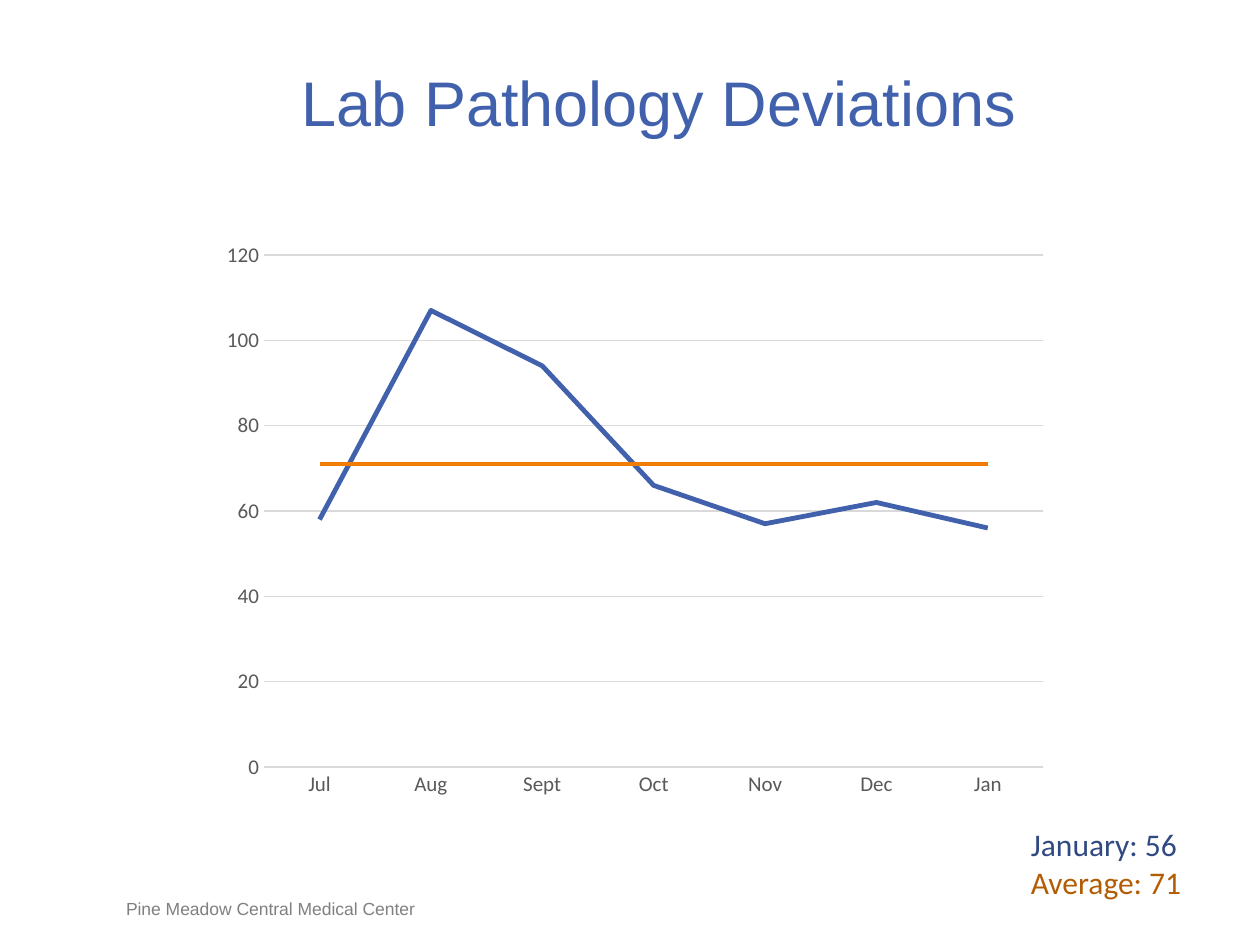
"""Build the Lab Pathology Deviations slide with its monthly line chart."""
from dataclasses import dataclass

from pptx import Presentation
from pptx.chart.data import CategoryChartData
from pptx.dml.color import RGBColor
from pptx.enum.chart import XL_CHART_TYPE, XL_MARKER_STYLE, XL_TICK_MARK
from pptx.enum.text import MSO_ANCHOR, PP_ALIGN
from pptx.util import Pt

LINE = XL_CHART_TYPE.LINE
NO_MARKER = XL_MARKER_STYLE.NONE
NO_TICK = XL_TICK_MARK.NONE
TOP, BOTTOM = MSO_ANCHOR.TOP, MSO_ANCHOR.BOTTOM
LEFT, CENTER = PP_ALIGN.LEFT, PP_ALIGN.CENTER

COLORS = {
    "blue": "4261AD",
    "orange": "F07B05",
    "navy": "314982",
    "rust": "B45C04",
    "footer": "808080",
    "axis_text": "595959",
    "grid": "D9D9D9",
}
MONTHS = ["Jul", "Aug", "Sept", "Oct", "Nov", "Dec", "Jan"]


@dataclass
class Box:
    left: float
    top: float
    width: float
    height: float

    def lengths(self) -> tuple:
        return Pt(self.left), Pt(self.top), Pt(self.width), Pt(self.height)


@dataclass
class Line:
    text: str
    color: str
    size: float
    font: str
    align: PP_ALIGN = LEFT


@dataclass
class Series:
    name: str
    values: list[float]
    color: str


SERIES = [
    Series("Series 1", [58, 107, 94, 66, 57, 62, 56], "blue"),
    Series("Series 2", [71] * len(MONTHS), "orange"),
]


def rgb(name: str) -> RGBColor:
    return RGBColor.from_string(COLORS[name])


def write(tf, lines: list[Line], margins: tuple = (0, 0), anchor=TOP) -> None:
    tf.word_wrap = True
    tf.vertical_anchor = anchor
    tf.margin_left = tf.margin_right = Pt(margins[0])
    tf.margin_top = tf.margin_bottom = Pt(margins[1])
    for i, line in enumerate(lines):
        p = tf.add_paragraph() if i else tf.paragraphs[0]
        p.text = line.text
        p.alignment = line.align
        p.font.size = Pt(line.size)
        p.font.name = line.font
        p.font.color.rgb = rgb(line.color)


def add_text(s, box: Box, lines: list[Line], **layout) -> None:
    write(s.shapes.add_textbox(*box.lengths()).text_frame, lines, **layout)


def style_axis(axis) -> None:
    axis.major_tick_mark = axis.minor_tick_mark = NO_TICK
    font = axis.tick_labels.font
    font.size = Pt(12)
    font.name = "Calibri"
    font.color.rgb = rgb("axis_text")


def add_line_chart(s, box: Box, series: list[Series]) -> None:
    data = CategoryChartData()
    data.categories = MONTHS
    for item in series:
        data.add_series(item.name, item.values)
    chart = s.shapes.add_chart(LINE, *box.lengths(), data).chart
    chart.has_legend = chart.has_title = False
    chart.font.size = Pt(10)
    chart.font.name = "Calibri"

    months, counts = chart.category_axis, chart.value_axis
    style_axis(months)
    style_axis(counts)
    months.format.line.color.rgb = rgb("grid")
    months.format.line.width = Pt(1)
    counts.minimum_scale, counts.maximum_scale, counts.major_unit = 0, 120, 20
    counts.format.line.fill.background()
    counts.has_major_gridlines = True
    grid = counts.major_gridlines.format.line
    grid.color.rgb = rgb("grid")
    grid.width = Pt(0.75)

    plot = chart.plots[0]
    plot.vary_by_categories = False
    for drawn, item in zip(plot.series, series):
        drawn.smooth = False
        drawn.marker.style = NO_MARKER
        drawn.format.line.color.rgb = rgb(item.color)
        drawn.format.line.width = Pt(2.75)


def main() -> None:
    prs = Presentation()
    prs.slide_width, prs.slide_height = Pt(720), Pt(540)
    s = prs.slides.add_slide(prs.slide_layouts[5])

    title = s.shapes.title
    title.left, title.top, title.width, title.height = Box(70.5, 36, 612, 44).lengths()
    write(title.text_frame,
          [Line("Lab Pathology Deviations", "blue", 36, "Arial", CENTER)])

    add_text(s, Box(72, 512.5, 228, 12.5),
             [Line("Pine Meadow Central Medical Center", "footer", 10, "Arial")],
             anchor=BOTTOM)
    add_line_chart(s, Box(120, 132, 486, 330), SERIES)
    add_text(s, Box(582, 468, 114, 51),
             [Line("January: 56", "navy", 18, "Calibri"),
              Line("Average: 71", "rust", 18, "Calibri")],
             margins=(7.2, 3.6))
    prs.save("out.pptx")


if __name__ == "__main__":
    main()
